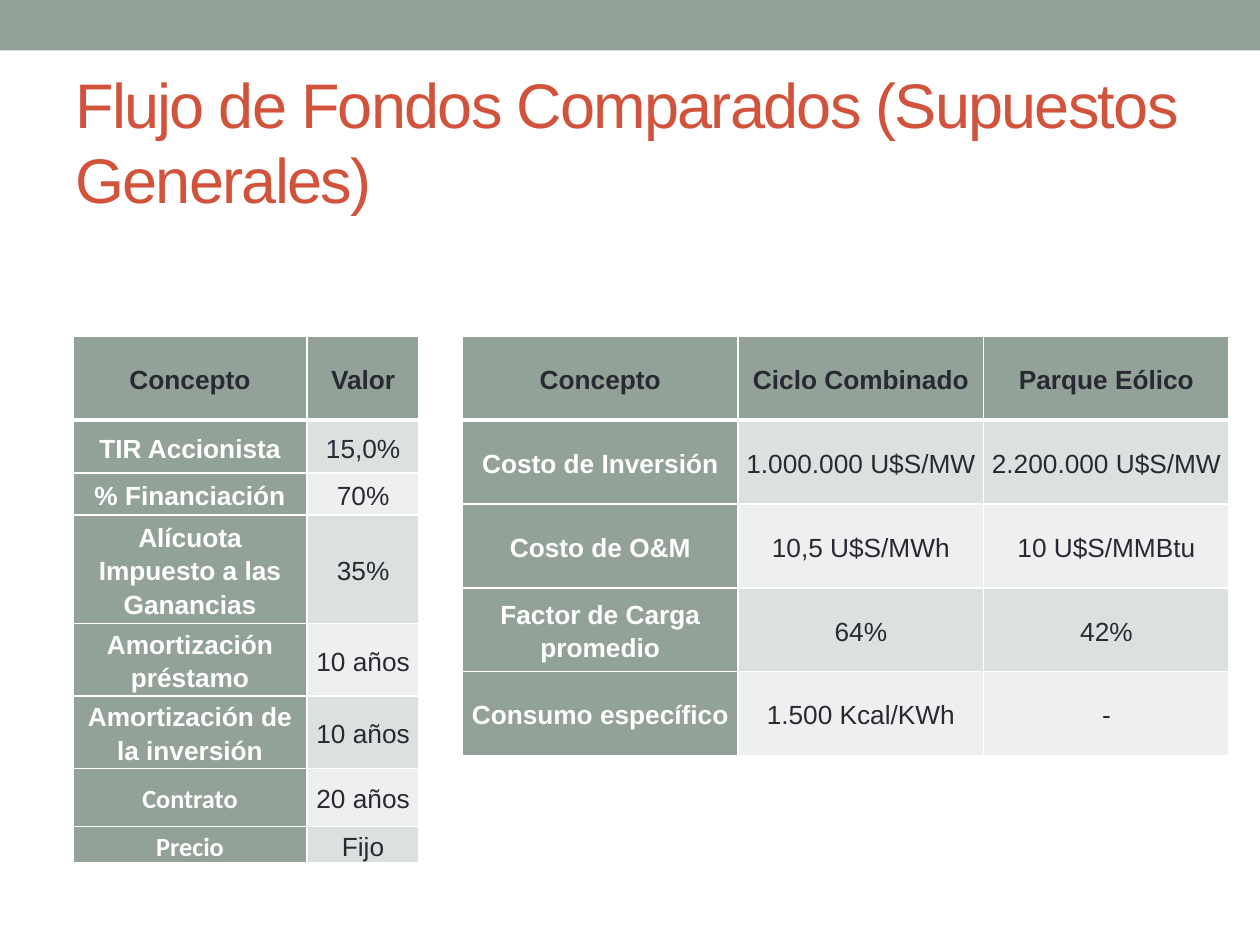
from dataclasses import dataclass

from lxml.etree import SubElement
from pptx import Presentation
from pptx.dml.color import RGBColor
from pptx.enum.shapes import MSO_SHAPE as Preset
from pptx.enum.text import MSO_ANCHOR as Anchor, PP_ALIGN as Align
from pptx.oxml.ns import qn
from pptx.util import Cm, Pt

SAGE = "93A299"
RUST = "D2533C"
INK = "292934"
WHITE = "FFFFFF"
BANDS = ("DCE0DE", "EEF0EF")


@dataclass
class Assumptions:
    left: float
    widths: list[float]
    heights: list[float]
    rows: list[tuple[str, ...]]
    calibri_concepts: tuple[str, ...] = ()


GENERAL = Assumptions(
    left=1.47,
    widths=[4.72, 2.26],
    heights=[1.69, 1.07, 0.84, 1.37, 1.37, 1.37, 1.17, 0.64],
    rows=[
        ("Concepto", "Valor"),
        ("TIR Accionista", "15,0%"),
        ("% Financiación", "70%"),
        ("Alícuota Impuesto a las Ganancias", "35%"),
        ("Amortización préstamo", "10 años"),
        ("Amortización de la inversión", "10 años"),
        ("Contrato", "20 años"),
        ("Precio", "Fijo"),
    ],
    calibri_concepts=("Contrato", "Precio"),
)

BY_PLANT = Assumptions(
    left=9.32,
    widths=[5.56, 4.95, 4.95],
    heights=[1.69] * 5,
    rows=[
        ("Concepto", "Ciclo Combinado", "Parque Eólico"),
        ("Costo de Inversión", "1.000.000 U$S/MW", "2.200.000 U$S/MW"),
        ("Costo de O&M", "10,5 U$S/MWh", "10 U$S/MMBtu"),
        ("Factor de Carga promedio", "64%", "42%"),
        ("Consumo específico", "1.500 Kcal/KWh", "-"),
    ],
)


def paint(color_format, color: str) -> None:
    color_format.rgb = RGBColor.from_string(color)


def fill_solid(fill, color: str) -> None:
    fill.solid()
    paint(fill.fore_color, color)


def style_font(font, size: float, color: str, name: str = "Arial", bold: bool = False) -> None:
    font.size = Pt(size)
    font.name = name
    font.bold = bold
    paint(font.color, color)


def add_borders(cell, row: int) -> None:
    properties = cell._tc.get_or_add_tcPr()
    weights = {"lnL": 1, "lnR": 1, "lnT": 3 if row == 1 else 1, "lnB": 3 if row == 0 else 1}
    for side, weight in weights.items():
        border = SubElement(properties, qn(f"a:{side}"), w=str(Pt(weight)))
        stroke = SubElement(border, qn("a:solidFill"))
        SubElement(stroke, qn("a:srgbClr"), val=WHITE)


def fill_cell(cell, text: str, row: int, column: int, font_name: str) -> None:
    is_header, is_concept = row == 0, column == 0
    add_borders(cell, row)
    fill_solid(cell.fill, SAGE if is_header or is_concept else BANDS[(row - 1) % 2])
    cell.vertical_anchor = Anchor.MIDDLE
    cell.margin_left = cell.margin_right = Cm(0.13)
    cell.margin_top = cell.margin_bottom = 0
    cell.text_frame.text = text
    paragraph = cell.text_frame.paragraphs[0]
    paragraph.alignment = Align.CENTER
    paragraph.line_spacing = 1.15
    color = WHITE if is_concept and not is_header else INK
    style_font(paragraph.runs[0].font, 15, color, font_name, is_header or is_concept)


def draw_assumptions(slide, data: Assumptions) -> None:
    table = slide.shapes.add_table(
        len(data.rows), len(data.widths), Cm(data.left), Cm(6.78),
        Cm(sum(data.widths)), Cm(sum(data.heights)),
    ).table
    for column, width in zip(table.columns, data.widths):
        column.width = Cm(width)
    for row, height in zip(table.rows, data.heights):
        row.height = Cm(height)
    for r, values in enumerate(data.rows):
        for c, value in enumerate(values):
            font_name = "Calibri" if value in data.calibri_concepts else "Arial"
            fill_cell(table.cell(r, c), value, r, c, font_name)


def draw_band(slide, width: int) -> None:
    band = slide.shapes.add_shape(Preset.RECTANGLE, 0, 0, width, Cm(1.02))
    band.shadow.inherit = False
    fill_solid(band.fill, SAGE)
    band.line.fill.background()


def draw_title(slide, text: str) -> None:
    title = slide.shapes.add_textbox(Cm(1.27), Cm(1.47), Cm(22.86), Cm(2.74)).text_frame
    title.word_wrap = True
    title.vertical_anchor = Anchor.MIDDLE
    title.text = text
    run = title.paragraphs[0].runs[0]
    style_font(run.font, 36, RUST)
    run.font._element.set("spc", "-100")


def main() -> None:
    deck = Presentation()
    deck.slide_width, deck.slide_height = Cm(25.4), Cm(19.05)
    slide = deck.slides.add_slide(deck.slide_layouts[6])
    draw_band(slide, deck.slide_width)
    draw_title(slide, "Flujo de Fondos Comparados (Supuestos Generales)")
    for data in (GENERAL, BY_PLANT):
        draw_assumptions(slide, data)
    deck.save("out.pptx")


if __name__ == "__main__":
    main()
